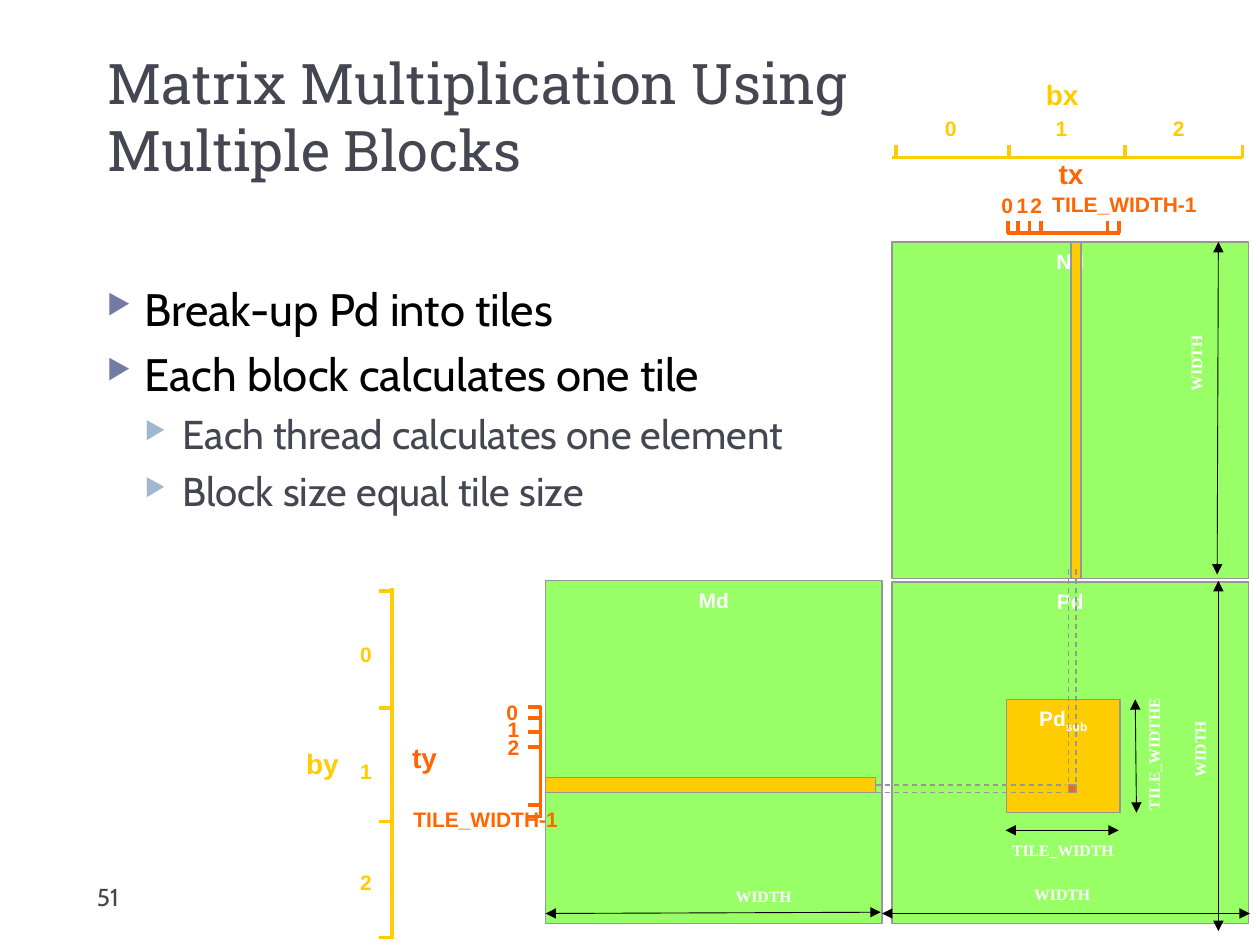
from lxml.etree import SubElement
from pptx import Presentation
from pptx.dml.color import RGBColor
from pptx.enum.dml import MSO_LINE
from pptx.enum.shapes import MSO_CONNECTOR, MSO_SHAPE
from pptx.enum.text import MSO_ANCHOR, MSO_AUTO_SIZE, PP_ALIGN
from pptx.oxml.ns import qn
from pptx.util import Inches, Pt

WHITE = RGBColor(0xFF, 0xFF, 0xFF)
BLACK = RGBColor(0x00, 0x00, 0x00)
SLATE = RGBColor(0x46, 0x46, 0x53)
GREEN = RGBColor(0x99, 0xFF, 0x66)
YELLOW = RGBColor(0xFF, 0xCC, 0x00)
ORANGE = RGBColor(0xFF, 0x66, 0x00)
GRAY = RGBColor(0x96, 0x96, 0x96)
BULLET_BLUE = RGBColor(0x72, 0x7C, 0xA3)
BULLET_PALE = RGBColor(0x9F, 0xB8, 0xCD)


def write(para, text, size=12, font="Arial", color=WHITE, bold=True,
          align=PP_ALIGN.CENTER, baseline=None):
    para.alignment = align
    span = para.add_run()
    span.text = text
    span.font.size = Pt(size)
    span.font.name = font
    span.font.bold = bold
    span.font.color.rgb = color
    if baseline is not None:
        span.font._element.set("baseline", str(baseline))


def add_line(x1, y1, x2, y2, color, width, dashed=False, arrows=False):
    line = slide.shapes.add_connector(
        MSO_CONNECTOR.STRAIGHT, Inches(x1), Inches(y1), Inches(x2), Inches(y2))
    line.line.color.rgb = color
    line.line.width = Pt(width)
    if dashed:
        line.line.dash_style = MSO_LINE.DASH
    if arrows:
        outline = line.line._get_or_add_ln()
        for end in ("a:headEnd", "a:tailEnd"):
            SubElement(outline, qn(end), type="triangle")
    SubElement(line._element.spPr, qn("a:effectLst"))
    return line


deck = Presentation()
deck.slide_width, deck.slide_height = Inches(10), Inches(7.5)
slide = deck.slides.add_slide(deck.slide_layouts[5])

# Title
title = slide.shapes.title
title.left, title.top = Inches(0.75), Inches(0.25)
title.width, title.height = Inches(6.17), Inches(1.25)
frame = title.text_frame
frame.auto_size = MSO_AUTO_SIZE.NONE
frame.vertical_anchor = MSO_ANCHOR.BOTTOM
write(frame.paragraphs[0], "Matrix Multiplication Using Multiple Blocks", size=32,
      font="Roboto Slab", color=SLATE, bold=False, align=PP_ALIGN.LEFT)

# Bullet list
box = slide.shapes.add_textbox(Inches(0.75), Inches(2.18), Inches(5.83), Inches(2.2))
frame = box.text_frame
frame.word_wrap = True
bullets = [
    ("Break-up Pd into tiles", 0),
    ("Each block calculates one tile", 0),
    ("Each thread calculates one element", 1),
    ("Block size equal tile size", 1),
]
level_styles = [(26, BLACK, BULLET_BLUE, 6), (23, SLATE, BULLET_PALE, 5)]
for index, (text, level) in enumerate(bullets):
    size, color, bullet_color, space = level_styles[level]
    para = frame.add_paragraph() if index else frame.paragraphs[0]
    para.level = level
    para.space_before = Pt(space)
    write(para, text, size=size, font="Cabin", color=color, bold=False,
          align=PP_ALIGN.LEFT)
    properties = para._p.get_or_add_pPr()
    properties.set("marL", str(Inches(0.3 * (level + 1))))
    properties.set("indent", str(Inches(-0.3)))
    SubElement(SubElement(properties, qn("a:buClr")), qn("a:srgbClr"),
               val=str(bullet_color))
    SubElement(properties, qn("a:buSzPct"), val="60000")
    SubElement(properties, qn("a:buChar"), char="▶")

# Slide number
box = slide.shapes.add_textbox(Inches(0.67), Inches(6.95), Inches(2.17), Inches(0.4))
write(box.text_frame.paragraphs[0], "51", size=14, font="Cabin", color=SLATE,
      bold=False, align=PP_ALIGN.LEFT)

# Matrices, tile, row, thread element and column
rectangles = [
    ("Md", 4.33, 4.61, 2.67, 2.72, GREEN),
    ("Nd", 7.08, 1.92, 2.83, 2.67, GREEN),
    ("Pd", 7.08, 4.62, 2.83, 2.71, GREEN),
    ("Pd sub", 7.99, 5.55, 0.9, 0.9, YELLOW),
    ("row", 4.33, 6.17, 2.62, 0.12, YELLOW),
    ("element", 8.48, 6.23, 0.06, 0.06, ORANGE),
    ("column", 8.5, 1.92, 0.08, 2.67, YELLOW),
]
blocks = {}
for name, left, top, width, height, color in rectangles:
    block = slide.shapes.add_shape(MSO_SHAPE.RECTANGLE, Inches(left), Inches(top),
                                   Inches(width), Inches(height))
    block.shadow.inherit = False
    block.fill.solid()
    block.fill.fore_color.rgb = color
    block.line.color.rgb = GRAY
    block.line.width = Pt(0.75)
    block.text_frame.vertical_anchor = MSO_ANCHOR.TOP
    if "d" in name:
        para = block.text_frame.paragraphs[0]
        label, _, subscript = name.partition(" ")
        write(para, label)
        if subscript:
            write(para, subscript, baseline=-25000)
    blocks[name] = block

# Dashed projections onto the element
for x in (8.48, 8.54):
    add_line(x, 4.52, x, 6.23, GRAY, 0.75, dashed=True)
upper = add_line(6.95, 6.23, 8.46, 6.23, GRAY, 0.75, dashed=True)
upper.begin_connect(blocks["row"], 3)
add_line(6.95, 6.29, 8.46, 6.29, GRAY, 0.75, dashed=True)

# Dimension arrows
for ends in [
    (9.67, 4.61, 9.67, 7.39), (9.92, 7.25, 7, 7.25), (9.01, 5.55, 9.02, 6.45),
    (7.98, 6.59, 8.88, 6.59), (4.33, 7.25, 6.99, 7.24), (9.66, 4.56, 9.67, 1.92),
]:
    add_line(*ends, BLACK, 0.5, arrows=True)

# Horizontal scales: start, end, baseline, ticks
for start, end, y, color, ticks in [
    (7.08, 9.86, 1.25, YELLOW, (7.11, 8.01, 8.93, 9.86)),
    (7.99, 8.89, 1.85, ORANGE, (8, 8.08, 8.17, 8.26, 8.79, 8.88)),
]:
    add_line(start, y, end, y, color, 2)
    for x in ticks:
        add_line(x, y - 0.1, x, y, color, 2)

# Vertical scales
for start, end, x, color, ticks in [
    (4.67, 7.45, 3.11, YELLOW, (4.69, 5.62, 6.52, 7.44)),
    (5.6, 6.49, 4.29, ORANGE, (5.61, 5.7, 5.81, 5.93, 6.39, 6.48)),
]:
    add_line(x, end, x, start, color, 2)
    for y in ticks:
        add_line(x - 0.1, y, x, y, color, 2)

# Scale labels: text, left, top, width, height, size, color
scale_labels = [
    ("bx", 8.2, 0.57, 0.46, 0.37, 16, YELLOW),
    ("tx", 8.3, 1.19, 0.4, 0.37, 16, ORANGE),
    ("by", 2.33, 5.88, 0.46, 0.37, 16, YELLOW),
    ("ty", 3.17, 5.83, 0.4, 0.37, 16, ORANGE),
    ("TILE_WIDTH-1", 8.25, 1.47, 1.35, 0.3, 12, ORANGE),
    ("TILE_WIDTH-1", 3.18, 6.35, 1.35, 0.3, 12, ORANGE),
]
for color, corners in [
    (YELLOW, [(7.4, 0.87), (8.28, 0.87), (9.21, 0.87)]),
    (ORANGE, [(7.85, 1.48), (7.97, 1.48), (8.08, 1.48)]),
    (YELLOW, [(2.76, 5.04), (2.76, 5.97), (2.76, 6.85)]),
    (ORANGE, [(3.92, 5.5), (3.93, 5.64), (3.93, 5.78)]),
]:
    for number, (left, top) in enumerate(corners):
        scale_labels.append((str(number), left, top, 0.26, 0.3, 12, color))
for text, left, top, width, height, size, color in scale_labels:
    box = slide.shapes.add_textbox(Inches(left), Inches(top), Inches(width), Inches(height))
    box.text_frame.word_wrap = False
    write(box.text_frame.paragraphs[0], text, size=size, color=color)

# Dimension labels, with room to stay on one line
for text, left, top, width, rotation in [
    ("TILE_WIDTH", 7.98, 6.67, 0.91, 0),
    ("WIDTH", 8.16, 7.02, 0.54, 0),
    ("WIDTH", 5.79, 7.04, 0.54, 0),
    ("TILE_WIDTHE", 8.66, 5.91, 0.99, 270),
    ("WIDTH", 9.25, 5.87, 0.54, 270),
    ("WIDTH", 9.22, 2.81, 0.54, 270),
]:
    box = slide.shapes.add_textbox(Inches(left), Inches(top), Inches(width), Inches(0.15))
    box.rotation = rotation
    frame = box.text_frame
    frame.word_wrap = False
    frame.margin_left = frame.margin_right = frame.margin_top = frame.margin_bottom = 0
    write(frame.paragraphs[0], text, size=9, font="Times New Roman")

deck.save("out.pptx")
